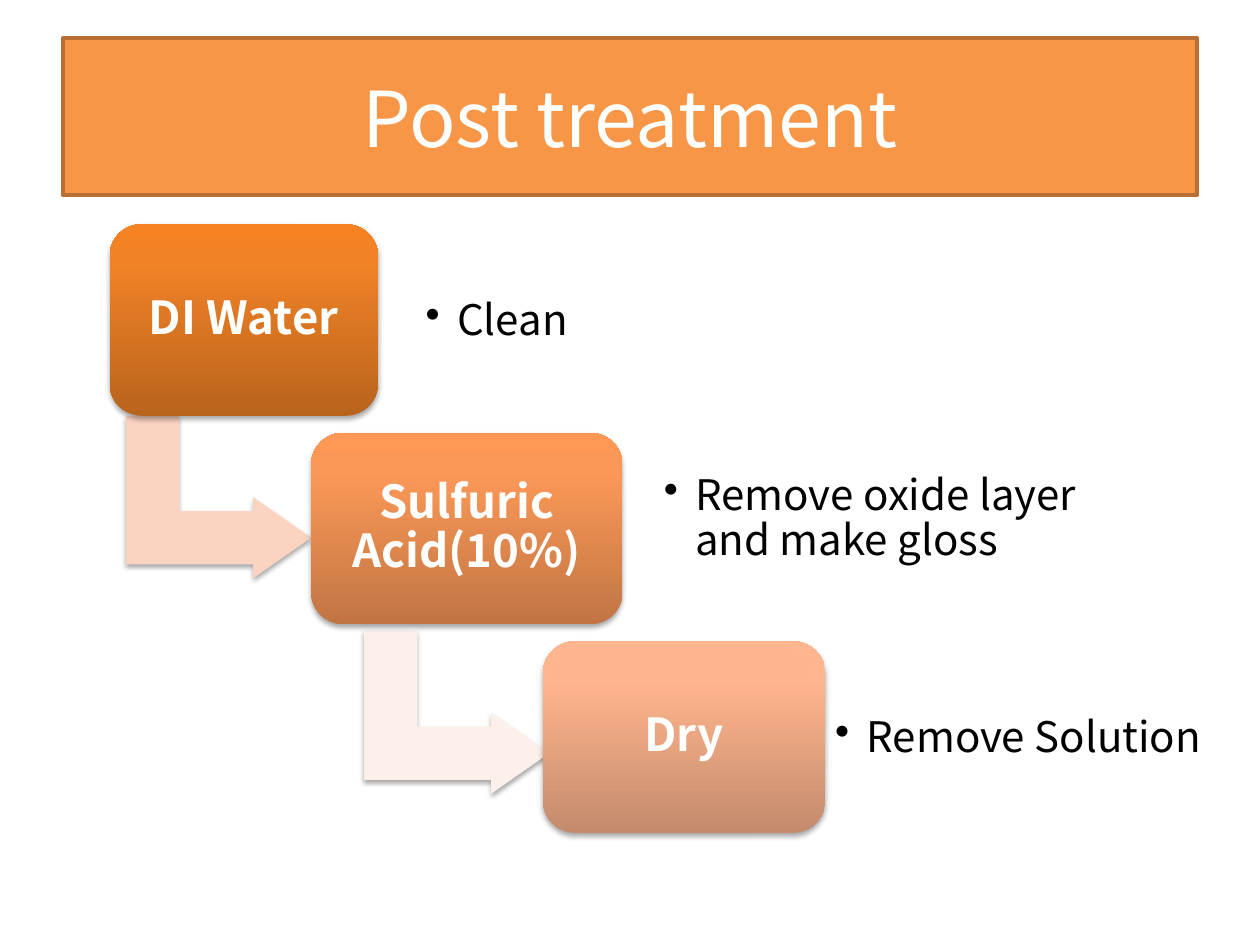
from copy import deepcopy

from lxml import etree
from pptx import Presentation
from pptx.dml.color import RGBColor
from pptx.enum.shapes import MSO_SHAPE
from pptx.enum.text import MSO_ANCHOR, PP_ALIGN
from pptx.oxml.ns import qn
from pptx.util import Inches, Pt

RECTANGLE = MSO_SHAPE.RECTANGLE
ROUNDED = MSO_SHAPE.ROUNDED_RECTANGLE
BENT_ARROW = MSO_SHAPE.BENT_UP_ARROW
MIDDLE = MSO_ANCHOR.MIDDLE
CENTER = PP_ALIGN.CENTER
LEFT = PP_ALIGN.LEFT

FONT = "Noto Sans CJK KR"
WHITE = RGBColor(0xFF, 0xFF, 0xFF)
BLACK = RGBColor(0x00, 0x00, 0x00)
ORANGE = RGBColor(0xF7, 0x96, 0x46)
BROWN = RGBColor(0xB7, 0x6F, 0x34)
PEACH = RGBColor(0xFB, 0xD3, 0xC1)
PALE_PEACH = RGBColor(0xFD, 0xEF, 0xE9)
DEEP_SHADES = (RGBColor(0xB9, 0x64, 0x1D), RGBColor(0xF1, 0x82, 0x26), RGBColor(0xF6, 0x82, 0x22))
MID_SHADES = (RGBColor(0xC1, 0x75, 0x43), RGBColor(0xFB, 0x98, 0x57), RGBColor(0xFF, 0x98, 0x54))
LIGHT_SHADES = (RGBColor(0xC4, 0x8B, 0x6D), RGBColor(0xFF, 0xB5, 0x8D), RGBColor(0xFF, 0xB6, 0x8F))


def write(shape, text, size, color, inset, align=CENTER, bold=False, spacing=0.9):
    frame = shape.text_frame
    frame.word_wrap = True
    frame.vertical_anchor = MIDDLE
    frame.margin_left = frame.margin_right = Inches(inset)
    frame.margin_top = frame.margin_bottom = Inches(inset)
    paragraph = frame.paragraphs[0]
    paragraph.alignment = align
    paragraph.line_spacing = spacing
    run = paragraph.add_run()
    run.text = text
    run.font.name = FONT
    run.font.size = Pt(size)
    run.font.bold = bold
    run.font.color.rgb = color
    east_asian = etree.SubElement(run.font._element, qn("a:ea"))
    east_asian.set("typeface", FONT)
    return paragraph


def cast_shadow(shape):
    shape.line.fill.background()
    shape.shadow.inherit = False
    effects = shape._element.spPr.find(qn("a:effectLst"))
    shadow = etree.SubElement(
        effects, qn("a:outerShdw"), blurRad=str(Pt(3.1)), dist=str(Pt(1.8)),
        dir="5400000", rotWithShape="0")
    color = etree.SubElement(shadow, qn("a:srgbClr"), val="000000")
    etree.SubElement(color, qn("a:alpha"), val="35000")


prs = Presentation()
prs.slide_width = Inches(10)
prs.slide_height = Inches(7.5)
slide = prs.slides.add_slide(prs.slide_layouts[6])
shapes = slide.shapes

title = shapes.add_shape(RECTANGLE, Inches(0.5), Inches(0.3), Inches(9), Inches(1.25))
title.shadow.inherit = False
title.fill.solid()
title.fill.fore_color.rgb = ORANGE
title.line.color.rgb = BROWN
title.line.width = Pt(2)
write(title, "Post treatment", 44, WHITE, 0.05, spacing=1.0)

FIRST_TOP, STEP_PITCH, STEP_HEIGHT = 1.78, 1.655, 1.52
steps = [
    ("DI Water", 0.87, 2.13, DEEP_SHADES, "Clean", 3.28, 1.94, 2.65, (1.09, 3.21, PEACH)),
    ("Sulfuric Acid(10%)", 2.47, 2.47, MID_SHADES,
     "Remove oxide layer and make gloss", 5.17, 3.51, 3.64, (2.98, 4.92, PALE_PEACH)),
    ("Dry", 4.31, 2.24, LIGHT_SHADES, "Remove Solution", 6.53, 5.25, 3.2, None),
]

for index, (name, left, width, shades, purpose, note_left, note_top, note_width, turn) in enumerate(steps):
    if turn:
        turn_left, turn_top, turn_color = turn
        arrow = shapes.add_shape(
            BENT_ARROW, Inches(turn_left), Inches(turn_top), Inches(1.29), Inches(1.47))
        arrow.rotation = 90
        for position, value in enumerate((0.328, 0.25, 0.358)):
            arrow.adjustments[position] = value
        arrow.fill.solid()
        arrow.fill.fore_color.rgb = turn_color
        cast_shadow(arrow)

    top = FIRST_TOP + index * STEP_PITCH
    box = shapes.add_shape(ROUNDED, Inches(left), Inches(top), Inches(width), Inches(STEP_HEIGHT))
    box.adjustments[0] = 0.167
    box.fill.gradient()
    box.fill.gradient_angle = 90
    stop_list = box._element.spPr.find(qn("a:gradFill")).find(qn("a:gsLst"))
    stop_list.append(deepcopy(stop_list[-1]))
    for stop, position, shade in zip(box.fill.gradient_stops, (0, 0.8, 1), shades):
        stop.position = position
        stop.color.rgb = shade
    cast_shadow(box)
    write(box, name, 26, WHITE, 0.11, bold=True)

    note = shapes.add_textbox(Inches(note_left), Inches(note_top), Inches(note_width), Inches(1.23))
    paragraph = write(note, purpose, 24, BLACK, 0.1, align=LEFT)
    properties = paragraph._p.get_or_add_pPr()
    properties.set("marL", str(Inches(0.25)))
    properties.set("indent", str(Inches(-0.25)))
    etree.SubElement(properties, qn("a:buChar"), char="•")

prs.save("out.pptx")
